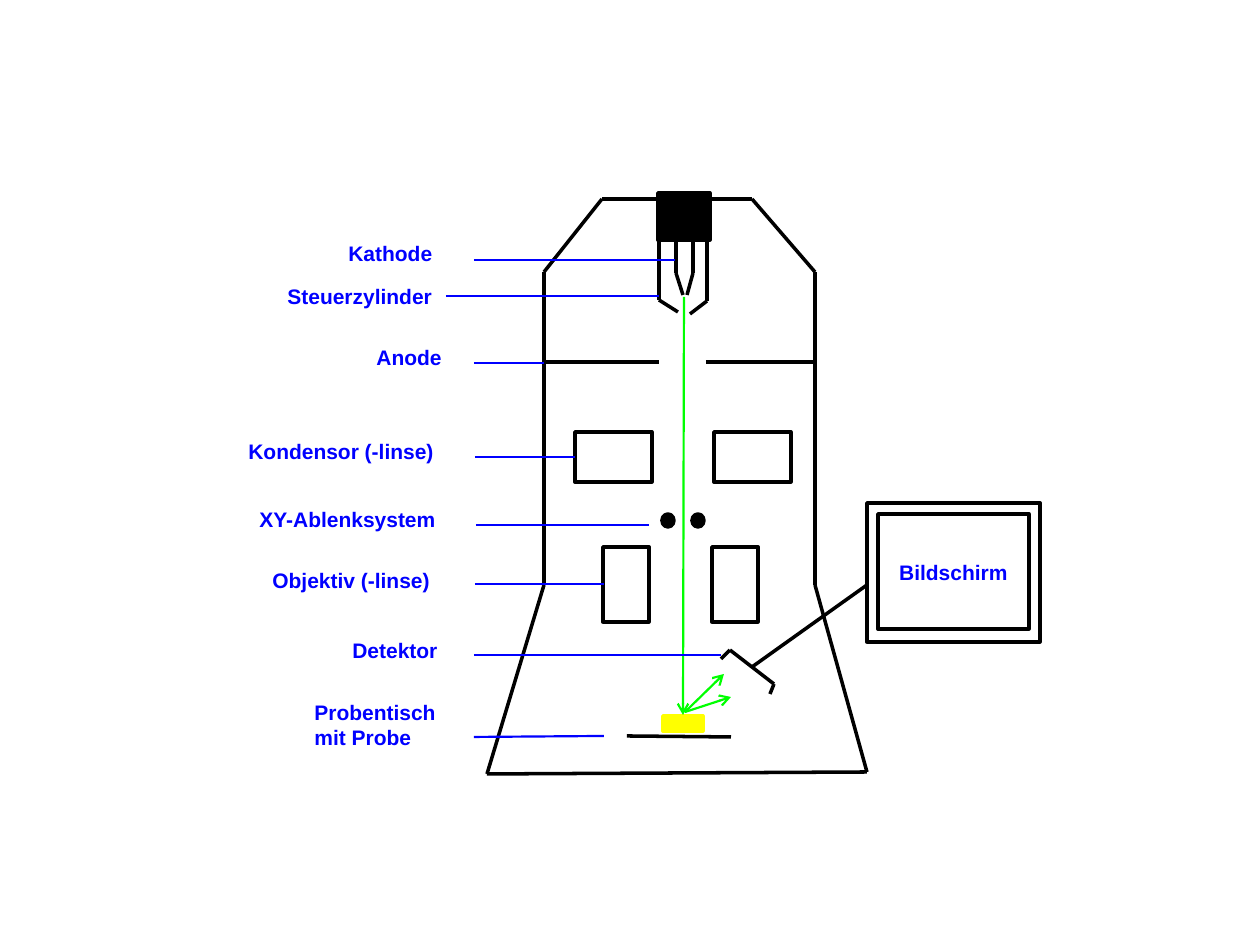
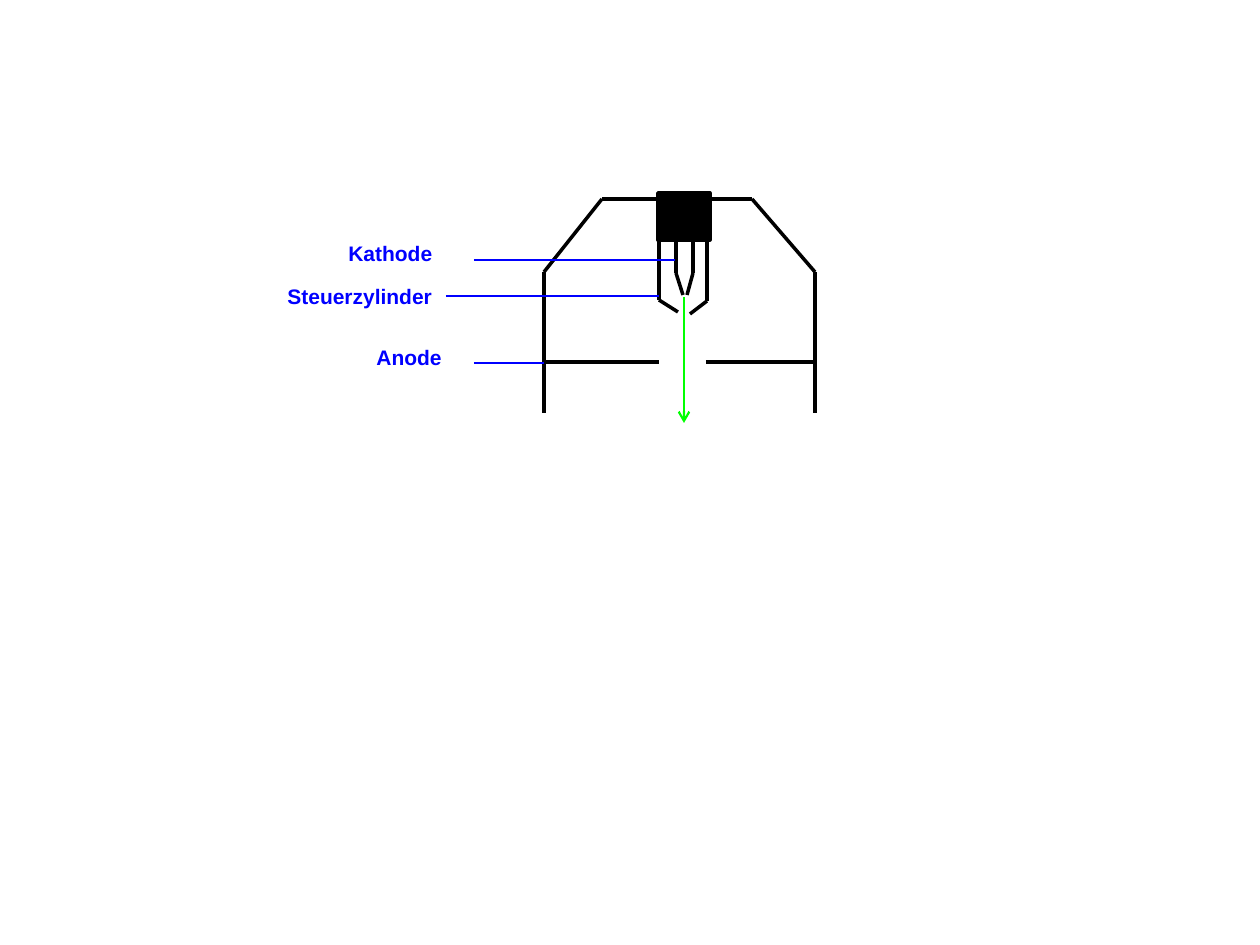
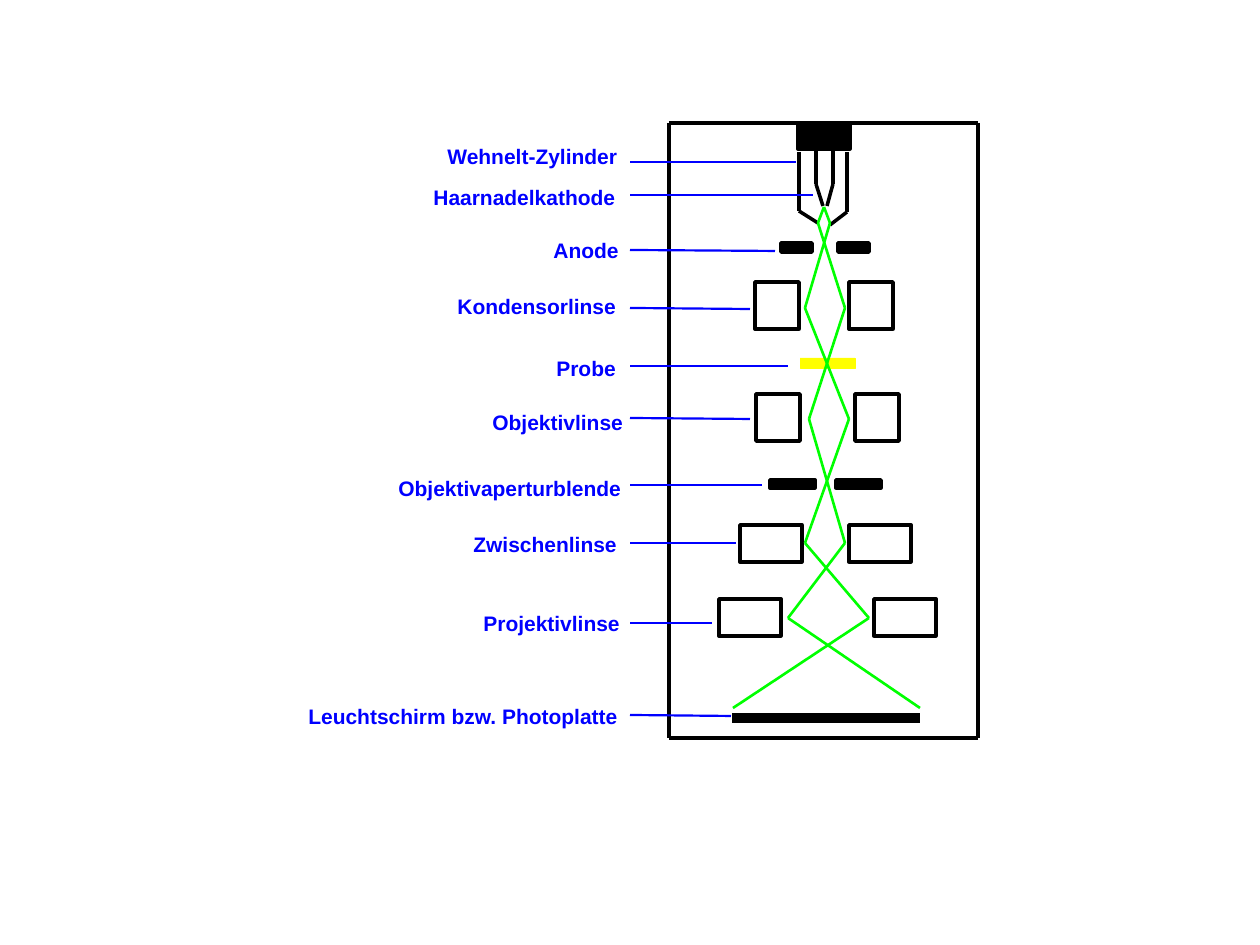
from itertools import pairwise

from lxml.etree import SubElement
from pptx import Presentation
from pptx.dml.color import RGBColor
from pptx.enum.shapes import MSO_CONNECTOR, MSO_SHAPE
from pptx.enum.text import MSO_AUTO_SIZE, PP_ALIGN
from pptx.oxml.ns import qn
from pptx.util import Emu, Pt

EMU_PER_PX = 914400 / 126
COLORS = {"ink": "000000", "paper": "FFFFFF", "label": "0000FF", "beam": "00FF00", "sample": "FFFF00"}
LABEL_HEIGHT = 38

GUN_LABELS = [
    ("Kathode", 336, 234, 109, (474, 260), (675, 260)),
    ("Steuerzylinder", 275, 277, 171, (446, 296), (659, 296)),
    ("Anode", 364, 338, 92, (474, 363), (544, 363)),
]
SCANNING_LABELS = [
    ("Kondensor (-linse)", 236, 432, 213, (475, 457), (575, 457)),
    ("XY-Ablenksystem", 247, 500, 203, (476, 525), (649, 525)),
    ("Objektiv (-linse)", 260, 561, 185, (475, 584), (604, 584)),
    ("Detektor", 340, 631, 111, (474, 655), (721, 655)),
    ("Probentisch\nmit Probe", 302, 693, 147, (474, 737), (604, 736)),
]
TRANSMISSION_LABELS = [
    ("Wehnelt-Zylinder", 435, 137, 198, (630, 162), (796, 162)),
    ("Haarnadelkathode", 421, 178, 209, (630, 195), (813, 195)),
    ("Anode", 541, 231, 92, (630, 250), (775, 251)),
    ("Kondensorlinse", 445, 287, 185, (630, 308), (750, 309)),
    ("Probe", 544, 349, 86, (630, 366), (788, 366)),
    ("Objektivlinse", 480, 403, 158, (630, 418), (750, 419)),
    ("Objektivaperturblende", 386, 469, 251, (630, 485), (762, 485)),
    ("Zwischenlinse", 461, 525, 170, (630, 543), (736, 543)),
    ("Projektivlinse", 471, 604, 164, (630, 623), (712, 623)),
    ("Leuchtschirm bzw. Photoplatte", 296, 697, 339, (630, 715), (731, 716)),
]


def px(length):
    return Emu(round(length * EMU_PER_PX))


def color(name):
    return RGBColor.from_string(COLORS[name])


def add_line(slide, start, end, stroke="ink", width=2, arrow=False):
    connector = slide.shapes.add_connector(MSO_CONNECTOR.STRAIGHT, *map(px, (*start, *end)))
    connector.line.color.rgb = color(stroke)
    connector.line.width = Pt(width)
    if arrow:
        SubElement(connector.line._get_or_add_ln(), qn("a:tailEnd"), type="arrow")
    SubElement(connector._element.spPr, qn("a:effectLst"))


def add_polyline(slide, points, stroke="ink", width=2):
    for start, end in pairwise(points):
        add_line(slide, start, end, stroke, width)


def add_part(slide, box, fill="paper", stroke="ink", width=2, kind=MSO_SHAPE.RECTANGLE):
    shape = slide.shapes.add_shape(kind, *map(px, box))
    shape.shadow.inherit = False
    shape.fill.solid()
    shape.fill.fore_color.rgb = color(fill)
    shape.line.color.rgb = color(stroke)
    shape.line.width = Pt(width)


def add_pair(slide, lefts, top, width, height, fill="paper", kind=MSO_SHAPE.RECTANGLE):
    for left in lefts:
        add_part(slide, (left, top, width, height), fill, kind=kind)


def add_label(slide, text, left, top, width, alignment=PP_ALIGN.LEFT):
    height = LABEL_HEIGHT + 25 * text.count("\n")
    frame = slide.shapes.add_textbox(*map(px, (left, top, width, height))).text_frame
    frame.word_wrap = False
    frame.auto_size = MSO_AUTO_SIZE.SHAPE_TO_FIT_TEXT
    frame.text = text
    for paragraph in frame.paragraphs:
        paragraph.alignment = alignment
        paragraph.font.name = "Arial"
        paragraph.font.size = Pt(12)
        paragraph.font.bold = True
        paragraph.font.color.rgb = color("label")


def add_callouts(slide, callouts):
    for text, left, top, width, start, end in callouts:
        add_line(slide, start, end, "label", 1.25)
        add_label(slide, text, left, top, width)


def add_gun(slide, center, top, block_top, block_height):
    add_part(slide, (center - 26, block_top, 52, block_height), "ink")
    paths = [
        [(-8, 0), (-8, 60), (-1, 82)],
        [(9, 0), (9, 60), (3, 82)],
        [(-25, 28), (-25, 87), (-6, 99)],
        [(23, 28), (23, 88), (6, 101)],
    ]
    for path in paths:
        add_polyline(slide, [(center + x, top + y) for x, y in path])


def add_column_head(slide, wall_bottom):
    add_polyline(slide, [(544, wall_bottom), (544, 272), (602, 199),
                         (752, 199), (815, 272), (815, wall_bottom)])
    add_gun(slide, 684, 213, 193, 47)
    add_line(slide, (544, 362), (659, 362))
    add_line(slide, (706, 362), (815, 362))
    add_callouts(slide, GUN_LABELS)


def build_scanning_microscope(slide):
    add_column_head(slide, 585)
    add_polyline(slide, [(544, 585), (487, 774), (867, 772), (815, 585)])
    add_pair(slide, (575, 714), 432, 77, 50)
    add_pair(slide, (603, 712), 547, 46, 75)
    add_pair(slide, (662, 692), 514, 12, 13, "ink", MSO_SHAPE.OVAL)
    add_part(slide, (663, 716, 40, 15), "sample", "sample")
    add_line(slide, (627, 736), (731, 737))
    add_line(slide, (684, 297), (683, 715), "beam", 1.25, arrow=True)
    for end in ((724, 674), (731, 697)):
        add_line(slide, (685, 712), end, "beam", 1.25, arrow=True)
    add_polyline(slide, [(721, 659), (730, 650), (774, 684), (770, 694)])
    add_line(slide, (867, 585), (752, 667))
    add_part(slide, (867, 503, 173, 139))
    add_part(slide, (878, 514, 151, 115))
    add_label(slide, "Bildschirm", 878, 553, 151, PP_ALIGN.CENTER)
    add_callouts(slide, SCANNING_LABELS)


def build_electron_gun(slide):
    add_column_head(slide, 413)
    add_line(slide, (684, 297), (684, 423), "beam", 1.25, arrow=True)


def build_transmission_microscope(slide):
    add_polyline(slide, [(669, 123), (978, 123), (978, 738), (669, 738), (669, 123)], width=2.25)
    add_gun(slide, 824, 124, 124, 25)
    add_pair(slide, (781, 838), 243, 31, 9, "ink")
    add_pair(slide, (755, 849), 282, 44, 47)
    add_part(slide, (800, 358, 55, 10), "sample", "sample", 0.25)
    add_pair(slide, (756, 855), 394, 44, 47)
    add_pair(slide, (770, 836), 480, 45, 8, "ink")
    add_pair(slide, (740, 849), 525, 62, 37)
    add_pair(slide, (719, 874), 599, 62, 37)
    add_line(slide, (732, 718), (920, 718), width=6)
    beam_levels = (207, 223, 308, 419, 481, 543, 618, 708)
    for beam in ((824, 818, 845, 809, 827, 845, 788, 920),
                 (824, 830, 805, 849, 827, 805, 869, 733)):
        add_polyline(slide, list(zip(beam, beam_levels)), "beam", 1.5)
    add_callouts(slide, TRANSMISSION_LABELS)


def main():
    presentation = Presentation()
    presentation.slide_width = px(1260)
    presentation.slide_height = px(945)
    for build in (build_scanning_microscope, build_electron_gun, build_transmission_microscope):
        build(presentation.slides.add_slide(presentation.slide_layouts[6]))
    presentation.save("out.pptx")


if __name__ == "__main__":
    main()
